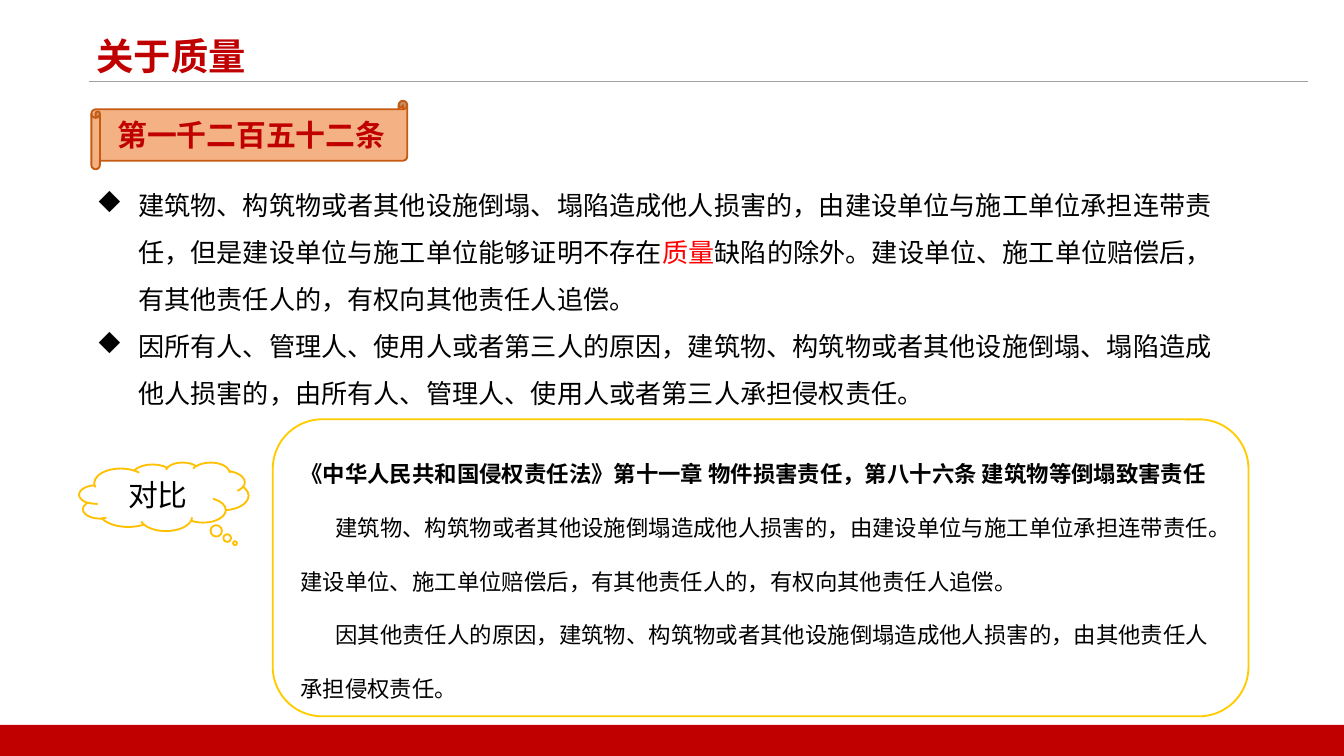
"""Build the slide on quality liability under Article 1252."""
from dataclasses import dataclass

from lxml import etree
from pptx import Presentation
from pptx.dml.color import RGBColor
from pptx.enum.shapes import MSO_CONNECTOR, MSO_SHAPE
from pptx.enum.text import MSO_ANCHOR, PP_ALIGN
from pptx.oxml.ns import qn
from pptx.util import Inches, Pt

RECT = MSO_SHAPE.RECTANGLE
ROUND = MSO_SHAPE.ROUNDED_RECTANGLE
SCROLL = MSO_SHAPE.HORIZONTAL_SCROLL
CLOUD = MSO_SHAPE.CLOUD_CALLOUT
LINE = MSO_CONNECTOR.STRAIGHT
TOP, MIDDLE = MSO_ANCHOR.TOP, MSO_ANCHOR.MIDDLE
LEFT, CENTER = PP_ALIGN.LEFT, PP_ALIGN.CENTER


@dataclass
class Theme:
    font: str = "Noto Sans CJK SC"
    red: str = "C00000"
    mark: str = "FF0000"
    ink: str = "000000"
    paper: str = "FFFFFF"
    rule: str = "A0A0A0"
    peach: str = "F4B183"
    rust: str = "C55A11"
    gold: str = "FFC000"
    frame: str = "FFCC00"
    title: int = 20
    head: int = 16
    body: int = 14
    note: int = 12


theme = Theme()
deck = Presentation()
deck.slide_width = Inches(10)
deck.slide_height = deck.slide_width * 9 // 16
col, row = deck.slide_width / 100, deck.slide_height / 56.25
slide = deck.slides.add_slide(deck.slide_layouts[6])
slide.background.fill.solid()
slide.background.fill.fore_color.rgb = RGBColor.from_string(theme.paper)


def add_box(kind, x, y, w, h, fill=None, edge=None):
    area = [int(v) for v in (x * col, y * row, w * col, h * row)]
    if kind is None:
        return slide.shapes.add_textbox(*area)
    box = slide.shapes.add_shape(kind, *area)
    box.shadow.inherit = False
    if fill:
        box.fill.solid()
        box.fill.fore_color.rgb = RGBColor.from_string(fill)
    else:
        box.fill.background()
    if edge:
        box.line.color.rgb = RGBColor.from_string(edge)
        box.line.width = Pt(1)
    else:
        box.line.fill.background()
    return box


def write(box, lines, size, color, bold=False, align=LEFT, anchor=TOP, space=1):
    frame = box.text_frame
    frame.word_wrap = True
    frame.vertical_anchor = anchor
    frame.text = "\n".join("".join(line) for line in lines)
    for para, line in zip(frame.paragraphs, lines):
        para.alignment = align
        para.line_spacing = space
        para.runs[0].text = line[0]
        for part in line[1:]:
            para.add_run().text = part
        for run in para.runs:
            run.font.name = theme.font
            run.font.size = Pt(size)
            run.font.bold = bold
            run.font.color.rgb = RGBColor.from_string(color)
            east = etree.SubElement(run.font._element, qn("a:ea"))
            east.set("typeface", theme.font)
    return frame.paragraphs


rule = slide.shapes.add_connector(
    LINE, int(6.6 * col), int(6.1 * row), int(97.3 * col), int(6.1 * row))
rule.line.color.rgb = RGBColor.from_string(theme.rule)
rule.line.width = Pt(0.5)
etree.SubElement(rule._element.spPr, qn("a:effectLst"))

title = add_box(None, 6.2, 2, 32.5, 5.1)
write(title, [["关于质量"]], theme.title, theme.red, bold=True)
add_box(RECT, 0, 53.95, 100, 2.3, theme.red)

scroll = add_box(SCROLL, 6.8, 7.5, 23.5, 5.1, theme.peach, theme.rust)
write(scroll, [["第一千二百五十二条"]], theme.head, theme.red, True, CENTER, MIDDLE)

law = add_box(None, 6.2, 12.45, 86.7, 18.1)
points = write(law, [
    ["建筑物、构筑物或者其他设施倒塌、塌陷造成他人损害的，由建设单位与施工单位承担连带责任，"
     "但是建设单位与施工单位能够证明不存在", "质量",
     "缺陷的除外。建设单位、施工单位赔偿后，有其他责任人的，有权向其他责任人追偿。"],
    ["因所有人、管理人、使用人或者第三人的原因，建筑物、构筑物或者其他设施倒塌、塌陷造成他人损害的，"
     "由所有人、管理人、使用人或者第三人承担侵权责任。"],
], theme.body, theme.ink, space=1.5)
for point in points:
    props = point._p.get_or_add_pPr()
    props.set("marL", str(int(3.1 * col)))
    props.set("indent", str(int(-3.1 * col)))
    etree.SubElement(props, qn("a:buFont")).set("typeface", "Wingdings")
    etree.SubElement(props, qn("a:buChar")).set("char", "u")
points[0].runs[1].font.color.rgb = RGBColor.from_string(theme.mark)

cloud = add_box(CLOUD, 5.9, 34.4, 12.6, 5.1, theme.paper, theme.gold)
cloud.adjustments[0], cloud.adjustments[1] = 0.42, 0.68
write(cloud, [["对比"]], theme.head, theme.ink, align=CENTER, anchor=MIDDLE)

panel = add_box(ROUND, 20.3, 31.2, 72.6, 22.1, edge=theme.frame)
notes = write(panel, [
    ["《中华人民共和国侵权责任法》第十一章 物件损害责任，第八十六条 建筑物等倒塌致害责任"],
    ["建筑物、构筑物或者其他设施倒塌造成他人损害的，由建设单位与施工单位承担连带责任。"
     "建设单位、施工单位赔偿后，有其他责任人的，有权向其他责任人追偿。"],
    ["因其他责任人的原因，建筑物、构筑物或者其他设施倒塌造成他人损害的，由其他责任人承担侵权责任。"],
], theme.note, theme.ink, anchor=MIDDLE, space=2)
notes[0].runs[0].font.bold = True
for note in notes[1:]:
    note._p.get_or_add_pPr().set("indent", str(int(2.6 * col)))

deck.save("out.pptx")
